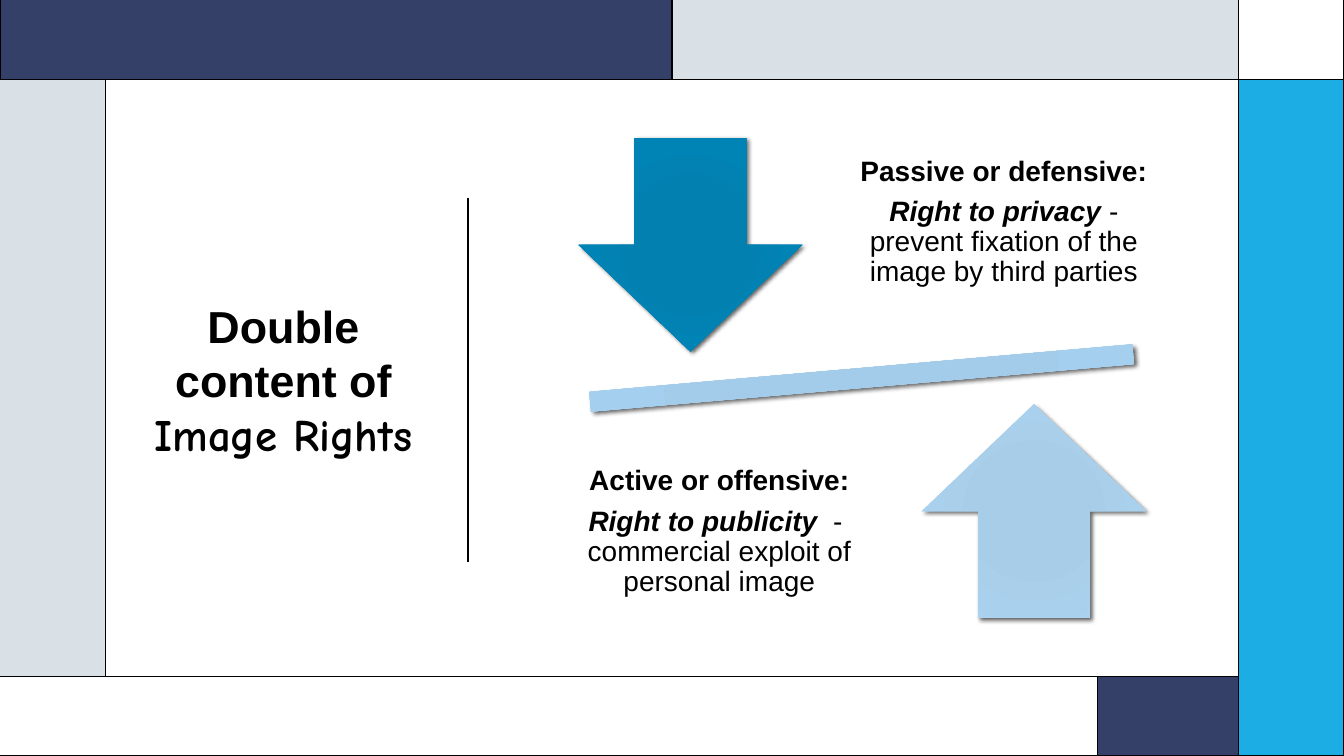
from dataclasses import dataclass

from lxml import etree
from pptx import Presentation
from pptx.dml.color import RGBColor
from pptx.enum.shapes import MSO_CONNECTOR, MSO_SHAPE
from pptx.enum.text import MSO_ANCHOR, PP_ALIGN
from pptx.oxml.ns import qn
from pptx.util import Cm, Pt

RECT = MSO_SHAPE.RECTANGLE
MINUS = MSO_SHAPE.MATH_MINUS
DOWN = MSO_SHAPE.DOWN_ARROW
UP = MSO_SHAPE.UP_ARROW
LINE = MSO_CONNECTOR.STRAIGHT
MIDDLE = MSO_ANCHOR.MIDDLE
CENTER = PP_ALIGN.CENTER

WIDE, HIGH = 33.87, 19.05
BAND, SIDE = 2, 2.65
STOPS = (0, 34, 70, 100)


@dataclass(frozen=True)
class Theme:
    ink: str = "000000"
    navy: str = "344068"
    white: str = "FFFFFF"
    mist: str = "D9E0E6"
    sky: str = "1CADE4"
    beam: tuple = ("A0CAE9", "A3CBEA", "A4CFEE", "B2D7F4")
    deep: tuple = ("0080B0", "0280B0", "0083B5", "0D83B0")
    pale: tuple = ("A5CBE7", "A8CDE8", "A9D0ED", "B6D9F3")
    sans: str = "Arial"
    comic: str = "Comic Neue"
    title: int = 32
    body: int = 20


THEME = Theme()


def color(code):
    return RGBColor.from_string(code)


def node(top, tag, **attrs):
    return etree.SubElement(top, qn(tag), {k: str(v) for k, v in attrs.items()})


def add_band(slide, x, y, w, h, fill):
    band = slide.shapes.add_shape(RECT, Cm(x), Cm(y), Cm(w), Cm(h))
    band.shadow.inherit = False
    band.fill.solid()
    band.fill.fore_color.rgb = color(fill)
    band.line.color.rgb = color(THEME.ink)
    band.line.width = Pt(0.75)


def add_frame(slide):
    right, low = WIDE - SIDE, HIGH - BAND
    half, notch = WIDE / 2, 27.66
    add_band(slide, 0, 0, half, BAND, THEME.navy)
    add_band(slide, notch, low, right - notch, BAND, THEME.navy)
    add_band(slide, right, 0, SIDE, BAND, THEME.white)
    add_band(slide, half, 0, right - half, BAND, THEME.mist)
    add_band(slide, right, BAND, SIDE, HIGH - BAND, THEME.sky)
    add_band(slide, 0, low, notch, BAND, THEME.white)
    add_band(slide, 0, BAND, SIDE, low - BAND, THEME.mist)


def add_rule(slide, x, top, end):
    rule = slide.shapes.add_connector(LINE, Cm(x), Cm(top), Cm(x), Cm(end))
    rule.line.color.rgb = color(THEME.ink)
    rule.line.width = Pt(1)
    node(rule._element.spPr, "a:effectLst")


def add_glow(slide, kind, x, y, w, h, tones, turn=0):
    shape = slide.shapes.add_shape(kind, Cm(x), Cm(y), Cm(w), Cm(h))
    shape.rotation = turn
    shape.line.fill.background()
    shape.fill.background()
    shape.shadow.inherit = False
    props = shape._element.spPr
    grad = etree.Element(qn("a:gradFill"), rotWithShape="1")
    stops = node(grad, "a:gsLst")
    for pos, tone in zip(STOPS, tones):
        node(node(stops, "a:gs", pos=pos * 1000), "a:srgbClr", val=tone)
    ring = node(grad, "a:path", path="circle")
    node(ring, "a:fillToRect", **dict.fromkeys("ltrb", 100000))
    props.replace(props.find(qn("a:noFill")), grad)
    cast = node(props.find(qn("a:effectLst")), "a:outerShdw", blurRad=Pt(3),
                dist=Pt(2), dir=45 * 60000, algn="ctr", rotWithShape=0)
    node(node(cast, "a:srgbClr", val=THEME.ink), "a:alpha", val=60000)


def add_text(slide, paras, x, y, w, h, size, inset, lead=None, after=0):
    box = slide.shapes.add_textbox(Cm(x), Cm(y), Cm(w), Cm(h))
    frame = box.text_frame
    frame.word_wrap = True
    frame.vertical_anchor = MIDDLE
    frame.margin_left = frame.margin_right = Cm(inset)
    frame.margin_top = frame.margin_bottom = Cm(inset)
    for i, runs in enumerate(paras):
        para = frame.add_paragraph() if i else frame.paragraphs[0]
        para.alignment = CENTER
        para.space_after = Pt(after)
        if lead:
            para.line_spacing = lead
        for text, bold, slant, face in runs:
            run = para.add_run()
            run.text = text
            font = run.font
            font.name, font.size = face, Pt(size)
            font.bold, font.italic = bold, slant
            font.color.rgb = color(THEME.ink)


def add_note(slide, head, right, rest, x, y, w):
    paras = [
        [(head, True, False, THEME.sans)],
        [(right, True, True, THEME.sans), (rest, False, False, THEME.sans)],
    ]
    add_text(slide, paras, x, y, w, 5.64, size=THEME.body, inset=0.41,
             lead=0.9, after=7)


def main():
    deck = Presentation()
    deck.slide_width, deck.slide_height = Cm(WIDE), Cm(HIGH)
    slide = deck.slides.add_slide(deck.slide_layouts[6])
    add_frame(slide)
    title = [
        [("Double content of", True, False, THEME.sans)],
        [("Image Rights", True, False, THEME.comic)],
    ]
    add_text(slide, title, 2.74, 5.94, 8.81, 7.24, size=THEME.title, inset=0.33)
    add_rule(slide, 11.79, 4.98, 14.15)
    add_glow(slide, MINUS, 12.37, 8.46, 18.69, 2.13, THEME.beam, turn=355)
    add_glow(slide, DOWN, 14.58, 3.48, 5.64, 5.38, THEME.deep)
    add_note(slide, "Passive or defensive:", "Right to privacy ",
             "- prevent fixation of the image by third parties",
             20.88, 2.79, 8.84)
    add_glow(slide, UP, 23.24, 10.19, 5.64, 5.38, THEME.pale)
    add_note(slide, "Active or offensive:", "Right to publicity ",
             " -  commercial exploit of personal image",
             13.23, 10.59, 9.8)
    deck.save("out.pptx")


if __name__ == "__main__":
    main()
